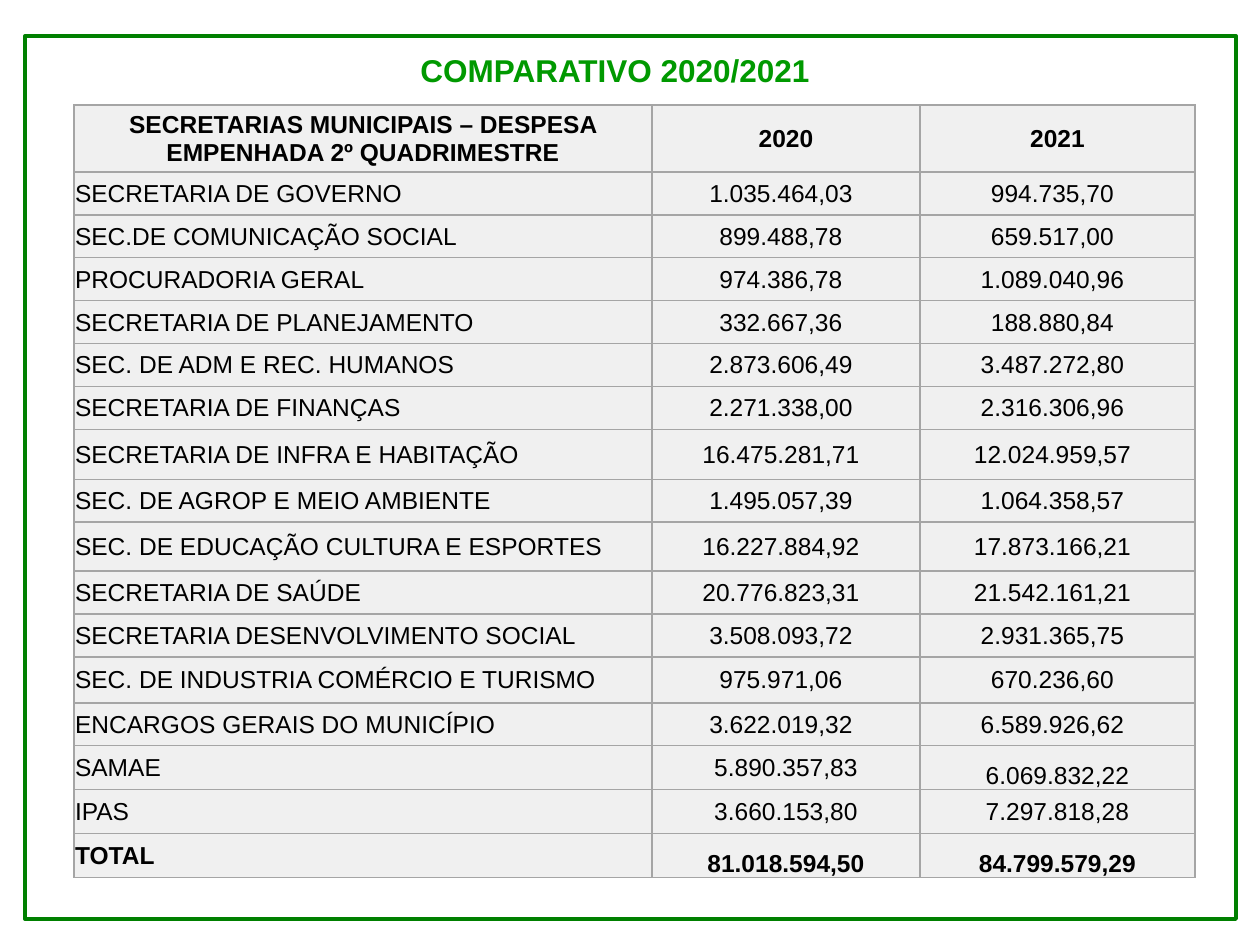
from pptx import Presentation
from pptx.dml.color import RGBColor
from pptx.enum.shapes import MSO_SHAPE
from pptx.enum.text import MSO_ANCHOR, MSO_AUTO_SIZE, PP_ALIGN
from pptx.oxml.ns import qn
from pptx.util import Emu, Pt
from lxml.etree import SubElement

EMU_PER_PX = 914400 / 126
FONT = "Arial"
COLORS = {
    "frame": "008000",
    "title": "009900",
    "text": "000000",
    "cell": "F0F0F0",
    "border": "A5A5A5",
}

HEADER = ("SECRETARIAS MUNICIPAIS – DESPESA EMPENHADA 2º QUADRIMESTRE", "2020", "2021")
DEPARTMENTS = [
    ("SECRETARIA DE GOVERNO", "1.035.464,03", "994.735,70"),
    ("SEC.DE COMUNICAÇÃO SOCIAL", "899.488,78", "659.517,00"),
    ("PROCURADORIA GERAL", "974.386,78", "1.089.040,96"),
    ("SECRETARIA DE PLANEJAMENTO", "332.667,36", "188.880,84"),
    ("SEC. DE ADM E REC. HUMANOS", "2.873.606,49", "3.487.272,80"),
    ("SECRETARIA DE FINANÇAS", "2.271.338,00", "2.316.306,96"),
    ("SECRETARIA DE INFRA E HABITAÇÃO", "16.475.281,71", "12.024.959,57"),
    ("SEC. DE AGROP E MEIO AMBIENTE", "1.495.057,39", "1.064.358,57"),
    ("SEC. DE EDUCAÇÃO CULTURA E ESPORTES", "16.227.884,92", "17.873.166,21"),
    ("SECRETARIA DE SAÚDE", "20.776.823,31", "21.542.161,21"),
    ("SECRETARIA DESENVOLVIMENTO SOCIAL", "3.508.093,72", "2.931.365,75"),
    ("SEC. DE INDUSTRIA COMÉRCIO E TURISMO", "975.971,06", "670.236,60"),
    ("ENCARGOS GERAIS DO MUNICÍPIO", "3.622.019,32", "6.589.926,62"),
]
AGENCIES = [
    ("SAMAE", "5.890.357,83", "6.069.832,22"),
    ("IPAS", "3.660.153,80", "7.297.818,28"),
]
TOTAL = ("TOTAL", "81.018.594,50", "84.799.579,29")
ROWS = [HEADER, *DEPARTMENTS, *AGENCIES, TOTAL]

COLUMN_SHARES = (578, 268, 275)
ROW_SHARE = 43
SPECIAL_ROW_SHARES = {0: 67, 7: 50, 9: 49, 12: 46, 14: 44, 15: 44, 16: 44}
BOTTOM_ANCHORED = {(14, 2), (16, 1), (16, 2)}


def px(length):
    return Emu(round(length * EMU_PER_PX))


def color(name):
    return RGBColor.from_string(COLORS[name])


def style_paragraph(paragraph, size, color_name, bold, alignment):
    paragraph.alignment = alignment
    font = paragraph.font
    font.name, font.size, font.bold = FONT, Pt(size), bold
    font.color.rgb = color(color_name)


def add_frame(slide, box):
    frame = slide.shapes.add_shape(MSO_SHAPE.RECTANGLE, *map(px, box))
    frame.shadow.inherit = False
    frame.fill.background()
    frame.line.color.rgb = color("frame")
    frame.line.width = Pt(2.25)


def add_title(slide, box):
    text_frame = slide.shapes.add_textbox(*map(px, box)).text_frame
    text_frame.word_wrap = True
    text_frame.auto_size = MSO_AUTO_SIZE.SHAPE_TO_FIT_TEXT
    paragraph = text_frame.paragraphs[0]
    paragraph.text = "COMPARATIVO 2020/2021 "
    style_paragraph(paragraph, 18, "title", True, PP_ALIGN.CENTER)


def add_borders(cell):
    """Draw all four sides; call before the fill, which must follow them in the XML."""
    properties = cell._tc.get_or_add_tcPr()
    for side in ("lnL", "lnR", "lnT", "lnB"):
        line = SubElement(properties, qn(f"a:{side}"), w=str(Pt(1)))
        fill = SubElement(line, qn("a:solidFill"))
        SubElement(fill, qn("a:srgbClr"), val=COLORS["border"])


def fill_cell(cell, text, row, column):
    is_header = row == 0
    is_department_value = 1 <= row <= len(DEPARTMENTS) and column > 0
    add_borders(cell)
    cell.fill.solid()
    cell.fill.fore_color.rgb = color("cell")
    cell.margin_left = cell.margin_top = px(1)
    cell.margin_right = px(11 if is_department_value else 1)
    cell.margin_bottom = 0
    bottom = (row, column) in BOTTOM_ANCHORED
    cell.vertical_anchor = MSO_ANCHOR.BOTTOM if bottom else MSO_ANCHOR.MIDDLE
    paragraph = cell.text_frame.paragraphs[0]
    paragraph.text = text
    centered = is_header or column > 0
    style_paragraph(paragraph, 14, "text", is_header or row == len(ROWS) - 1,
                    PP_ALIGN.CENTER if centered else PP_ALIGN.LEFT)


def add_expense_table(slide, box):
    left, top, width, height = box
    table = slide.shapes.add_table(len(ROWS), len(HEADER), *map(px, box)).table
    table.horz_banding = False
    row_shares = [SPECIAL_ROW_SHARES.get(row, ROW_SHARE) for row in range(len(ROWS))]
    for column, share in zip(table.columns, COLUMN_SHARES):
        column.width = px(width * share / sum(COLUMN_SHARES))
    for row, share in zip(table.rows, row_shares):
        row.height = px(height * share / sum(row_shares))
    for row, texts in enumerate(ROWS):
        for column, text in enumerate(texts):
            fill_cell(table.cell(row, column), text, row, column)


def main():
    presentation = Presentation()
    presentation.slide_width, presentation.slide_height = px(1260), px(945)
    slide = presentation.slides.add_slide(presentation.slide_layouts[6])
    add_expense_table(slide, (74, 105, 1121, 773))
    add_title(slide, (203, 45, 833, 50))
    add_frame(slide, (25, 36, 1211, 883))
    presentation.save("out.pptx")


if __name__ == "__main__":
    main()
